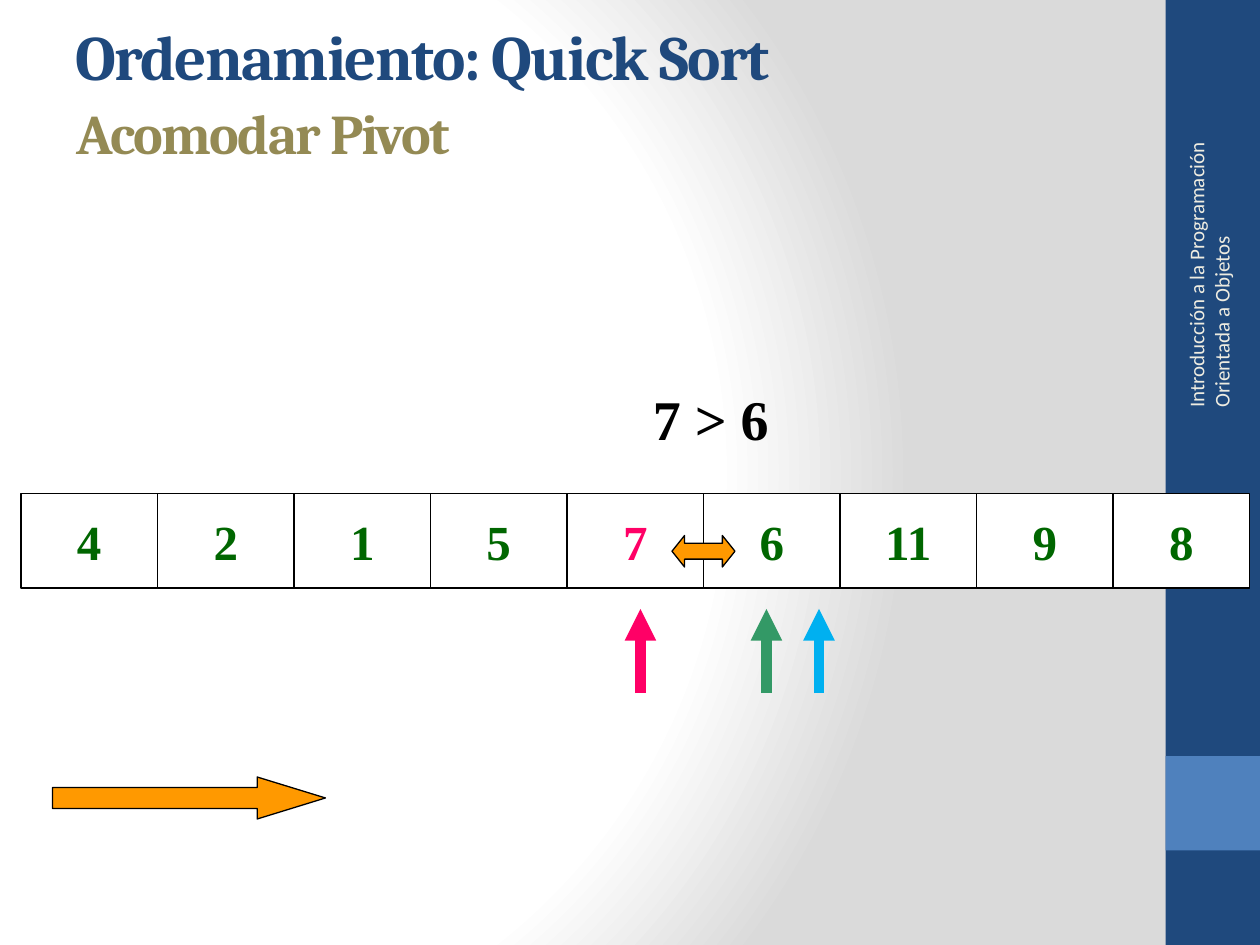
from lxml import etree
from pptx import Presentation, util as u
from pptx.dml.color import RGBColor
from pptx.enum import shapes, text
from pptx.oxml import parse_xml
from pptx.oxml.ns import nsdecls, qn

# The slide is a grid of 120 columns by 90 rows, 12 to the inch
UNIT = u.Inches(1) // 12
COLS, ROWS = 120, 90

NAVY = RGBColor(0x1F, 0x49, 0x7D)
BLUE = RGBColor(0x4F, 0x81, 0xBD)
CREAM = RGBColor(0xEE, 0xEC, 0xE1)
OLIVE = RGBColor(0x94, 0x8A, 0x54)
GREEN = RGBColor(0x00, 0x66, 0x00)
PINK = RGBColor(0xFF, 0x00, 0x66)
TEAL = RGBColor(0x33, 0x99, 0x66)
SKY = RGBColor(0x00, 0xB0, 0xF0)
ORANGE = RGBColor(0xFF, 0x99, 0x00)
BLACK = RGBColor(0, 0, 0)
WHITE = RGBColor(0xFF, 0xFF, 0xFF)

VALUES = [4, 2, 1, 5, 7, 6, 11, 9, 8]
PIVOT = 7
SERIF = "Times New Roman"


def grid(*cells):
    return [round(c * UNIT) for c in cells]


def set_background(s):
    stops = "".join(
        f'<a:gs pos="{pos * 1000}"><a:srgbClr val="{color}"/></a:gs>'
        for pos, color in ((0, "FFFFFF"), (75, "FFFFFF"), (100, "DADADA")))
    bg = parse_xml(
        f'<p:bg {nsdecls("p", "a")}><p:bgPr><a:gradFill rotWithShape="1">'
        f'<a:gsLst>{stops}</a:gsLst><a:path path="circle">'
        '<a:fillToRect l="20000" t="50000" r="100000" b="50000"/></a:path>'
        '</a:gradFill><a:effectLst/></p:bgPr></p:bg>')
    s.element.cSld.insert(0, bg)


def add_run(p, words, size, font, color, bold=True, spacing=None):
    r = p.add_run()
    r.text = words
    r.font.size, r.font.name, r.font.bold = u.Pt(size), font, bold
    r.font.color.rgb = color
    if spacing is not None:
        r.font._element.set("spc", str(spacing * 100))


def add_block(s, kind, box, fill, line=None, adjustments=()):
    sp = s.shapes.add_shape(kind, *grid(*box))
    sp.shadow.inherit = False
    sp.fill.solid()
    sp.fill.fore_color.rgb = fill
    if line is None:
        sp.line.fill.background()
    else:
        sp.line.color.rgb = line
        sp.line.width = u.Pt(0.75)
    for i, value in enumerate(adjustments):
        sp.adjustments[i] = value
    return sp


def add_label(s, box, *run, **style):
    sp = s.shapes.add_textbox(*grid(*box))
    sp.text_frame.word_wrap = True
    add_run(sp.text_frame.paragraphs[0], *run, **style)
    return sp


def add_cell(s, col, value):
    sp = add_block(s, shapes.MSO_SHAPE.RECTANGLE, (2 + 13 * col, 47, 13, 9),
                   WHITE, BLACK)
    tf = sp.text_frame
    tf.word_wrap = False
    tf.vertical_anchor = text.MSO_ANCHOR.MIDDLE
    p = tf.paragraphs[0]
    p.alignment = text.PP_ALIGN.CENTER
    add_run(p, str(value), 28, SERIF, PINK if value == PIVOT else GREEN)


def add_pointer(s, col, color):
    line = s.shapes.add_connector(shapes.MSO_CONNECTOR.STRAIGHT,
                                  *grid(col, 66, col, 58))
    line.line.color.rgb = color
    line.line.width = u.Pt(6)
    etree.SubElement(line.line._get_or_add_ln(), qn("a:tailEnd"),
                     type="triangle")
    etree.SubElement(line._element.spPr, qn("a:effectLst"))


def main():
    prs = Presentation()
    prs.slide_width, prs.slide_height = grid(COLS, ROWS)
    s = prs.slides.add_slide(prs.slide_layouts[6])
    kinds = shapes.MSO_SHAPE

    # Background and side band
    set_background(s)
    add_block(s, kinds.RECTANGLE, (111, 0, 9, ROWS), NAVY)
    add_block(s, kinds.RECTANGLE, (111, 72, 9, 9), BLUE)
    side = add_label(s, (99.1, 21.6, 32, 4.8),
                     "Introducción a la Programación Orientada a Objetos",
                     12, "Calibri", CREAM, bold=False)
    side.rotation = 270
    side.text_frame.vertical_anchor = text.MSO_ANCHOR.MIDDLE

    # Array
    for col, value in enumerate(VALUES):
        add_cell(s, col, value)

    # Index pointers
    for col, color in ((61, PINK), (73, TEAL), (78, SKY)):
        add_pointer(s, col, color)

    # Direction, comparison and swap
    add_block(s, kinds.RIGHT_ARROW, (5, 74, 26, 4), ORANGE, BLACK,
              (0.5, 1.625))
    comparison = add_label(s, (61, 36, 23, 7.6), "7 > 6", 32, SERIF, BLACK)
    comparison.text_frame.paragraphs[0].space_before = u.Pt(3)
    add_block(s, kinds.LEFT_RIGHT_ARROW, (64, 51, 6, 3), ORANGE, BLACK,
              (0.5, 0.4))

    # Titles
    add_label(s, (6, 1.1, 107.8, 7.9), "Ordenamiento: Quick Sort",
              36, "Cambria", NAVY, spacing=-1)
    add_label(s, (6.1, 8.8, 107.8, 7.9), "Acomodar Pivot",
              32, "Cambria", OLIVE, spacing=-1)

    prs.save("out.pptx")


if __name__ == "__main__":
    main()
